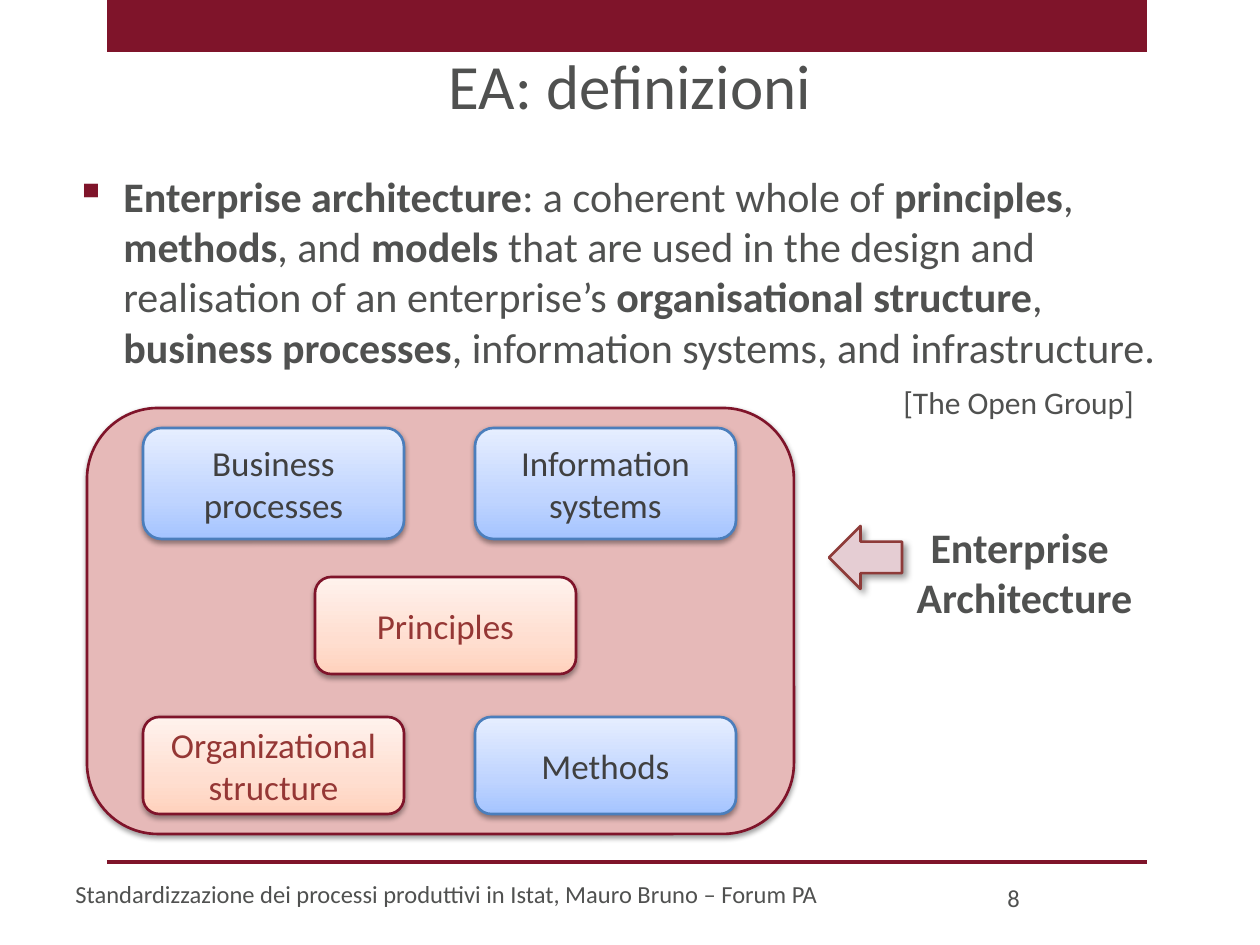
import copy

import pptx
import pptx.dml.color
import pptx.enum.shapes
import pptx.enum.text
import pptx.oxml
import pptx.oxml.ns
import pptx.util
from lxml import etree

RGB = pptx.dml.color.RGBColor
SHAPE = pptx.enum.shapes.MSO_SHAPE
ALIGN = pptx.enum.text.PP_ALIGN
ANCHOR = pptx.enum.text.MSO_ANCHOR
qn = pptx.oxml.ns.qn

CRIMSON = RGB(0x7F, 0x14, 0x2A)
INK = RGB(0x50, 0x51, 0x50)
PINK = RGB(0xE6, 0xB9, 0xB8)
ARROW_FILL = RGB(0xE5, 0xCD, 0xD3)
ARROW_EDGE = RGB(0x8E, 0x3B, 0x39)
BRICK = RGB(0x95, 0x37, 0x35)
CHARCOAL = RGB(0x40, 0x40, 0x40)
BLUE_EDGE = RGB(0x4B, 0x7E, 0xBC)
PEACH = [RGB(0xFF, 0xD2, 0xBD), RGB(0xFF, 0xDE, 0xD0), RGB(0xFF, 0xF2, 0xED)]
SKY = [RGB(0xA4, 0xC4, 0xFF), RGB(0xBF, 0xD4, 0xFF), RGB(0xE6, 0xEE, 0xFF)]
WARM = (PEACH, CRIMSON, BRICK)
COOL = (SKY, BLUE_EDGE, CHARCOAL)
SOFT_SHADOW = (38, 3.1, 1.6, 90)
ARROW_SHADOW = (40, 4, 3, 45)


def px(length):
    return round(length * 914400 / 126)


class SlideBuilder:
    font_name = "Calibri"

    def __init__(self, slide):
        self.slide = slide

    def style(self, paragraph, size, color=INK, align=None, bold=None):
        paragraph.alignment = align
        font = paragraph.font
        font.name = self.font_name
        font.size = pptx.util.Pt(size)
        font.color.rgb = color
        font.bold = bold

    def title(self, text, *box):
        title = self.slide.shapes.title
        title.left, title.top, title.width, title.height = map(px, box)
        title.text_frame.text = text
        title.text_frame.vertical_anchor = ANCHOR.TOP
        self.style(title.text_frame.paragraphs[0], 36, align=ALIGN.CENTER)

    def text(self, lines, size, *box, align=None, bold=None, wrap=True):
        frame = self.slide.shapes.add_textbox(*map(px, box)).text_frame
        frame.word_wrap = wrap
        frame.text = "\n".join(lines)
        for paragraph in frame.paragraphs:
            self.style(paragraph, size, align=align, bold=bold)

    def bullet(self, phrases, size, *box):
        frame = self.slide.shapes.add_textbox(*map(px, box)).text_frame
        frame.word_wrap = True
        paragraph = frame.paragraphs[0]
        properties = paragraph._p.get_or_add_pPr()
        properties.set("marL", str(px(48)))
        properties.set("indent", str(px(-48)))
        bullet_color = etree.SubElement(properties, qn("a:buClr"))
        etree.SubElement(bullet_color, qn("a:srgbClr"), val=str(CRIMSON))
        etree.SubElement(properties, qn("a:buChar"), char="▪")
        self.style(paragraph, size)
        for phrase, bold in phrases:
            run = paragraph.add_run()
            run.text = phrase
            run.font.bold = bold

    def shape(self, kind, fill, edge, *box, shadow=None):
        shape = self.slide.shapes.add_shape(kind, *map(px, box))
        if isinstance(fill, list):
            self.gradient(shape, fill)
        else:
            shape.fill.solid()
            shape.fill.fore_color.rgb = fill
        if edge is None:
            shape.line.fill.background()
        else:
            shape.line.color.rgb = edge
            shape.line.width = pptx.util.Pt(1.5)
        shape.shadow.inherit = False
        if shadow:
            self.cast_shadow(shape, *shadow)
        return shape

    def gradient(self, shape, colors):
        shape.fill.gradient()
        shape.fill.gradient_angle = 90
        stops = shape._element.spPr.find(".//" + qn("a:gsLst"))
        stops.append(copy.deepcopy(stops[0]))
        for stop, color, position in zip(shape.fill.gradient_stops, colors, (0, 0.35, 1)):
            stop.color.rgb = color
            stop.position = position

    def cast_shadow(self, shape, opacity, blur, distance, angle):
        effects = shape._element.spPr.find(qn("a:effectLst"))
        outer = etree.SubElement(
            effects, qn("a:outerShdw"), blurRad=str(int(pptx.util.Pt(blur))),
            dist=str(int(pptx.util.Pt(distance))), dir=str(angle * 60000), rotWithShape="0")
        color = etree.SubElement(outer, qn("a:srgbClr"), val="000000")
        etree.SubElement(color, qn("a:alpha"), val=str(opacity * 1000))

    def card(self, label, theme, *box):
        fill, edge, ink = theme
        card = self.shape(SHAPE.ROUNDED_RECTANGLE, fill, edge, *box, shadow=SOFT_SHADOW)
        frame = card.text_frame
        frame.word_wrap = True
        frame.vertical_anchor = ANCHOR.MIDDLE
        frame.text = label
        self.style(frame.paragraphs[0], 20, ink, ALIGN.CENTER)

    def rule(self, *ends):
        rule = self.slide.shapes.add_connector(
            pptx.enum.shapes.MSO_CONNECTOR.STRAIGHT, *map(px, ends))
        rule.line.color.rgb = CRIMSON
        rule.line.width = pptx.util.Pt(2)
        etree.SubElement(rule._element.spPr, qn("a:effectLst"))


def main():
    deck = pptx.Presentation()
    deck.slide_width, deck.slide_height = px(1260), px(945)
    page = SlideBuilder(deck.slides.add_slide(deck.slide_layouts[5]))

    page.shape(SHAPE.RECTANGLE, CRIMSON, None, 107, 0, 1040, 52)
    page.rule(107, 862, 1147, 862)
    page.title("EA: definizioni", 63, 40, 1134, 158)
    page.bullet([
        ("Enterprise architecture", True),
        (": a coherent whole of ", False),
        ("principles", True),
        (", ", False),
        ("methods", True),
        (", and ", False),
        ("models", True),
        (" that are used in the design and realisation of an enterprise’s ", False),
        ("organisational structure", True),
        (", ", False),
        ("business processes", True),
        (", information systems, and infrastructure.", False),
    ], 24, 63, 164, 1134, 367)
    page.text(["Standardizzazione dei processi produttivi in Istat, Mauro Bruno – Forum PA"],
              14, 63, 873, 827, 50)
    page.text(["8"], 14, 995, 877, 89, 50)
    page.text(["[The Open Group]"], 18, 891, 377, 267, 50)

    page.shape(SHAPE.ROUNDED_RECTANGLE, PINK, CRIMSON, 87, 408, 707, 426, shadow=SOFT_SHADOW)
    left, middle, right = 143, 315, 475
    top, centre, bottom = (428, 111), (577, 97), (717, 97)
    for label, theme, x, (y, height) in [
        ("Principles", WARM, middle, centre),
        ("Organizational structure", WARM, left, bottom),
        ("Business processes", COOL, left, top),
        ("Information systems", COOL, right, top),
        ("Methods", COOL, right, bottom),
    ]:
        page.card(label, theme, x, y, 261, height)

    page.text(["Enterprise ", "Architecture"], 24, 903, 515, 243, 115,
              align=ALIGN.CENTER, bold=True, wrap=False)
    arrow = page.shape(SHAPE.DOWN_ARROW, ARROW_FILL, ARROW_EDGE, 834, 521, 63, 73,
                       shadow=ARROW_SHADOW)
    arrow.rotation = 90

    deck.save("out.pptx")


if __name__ == "__main__":
    main()
